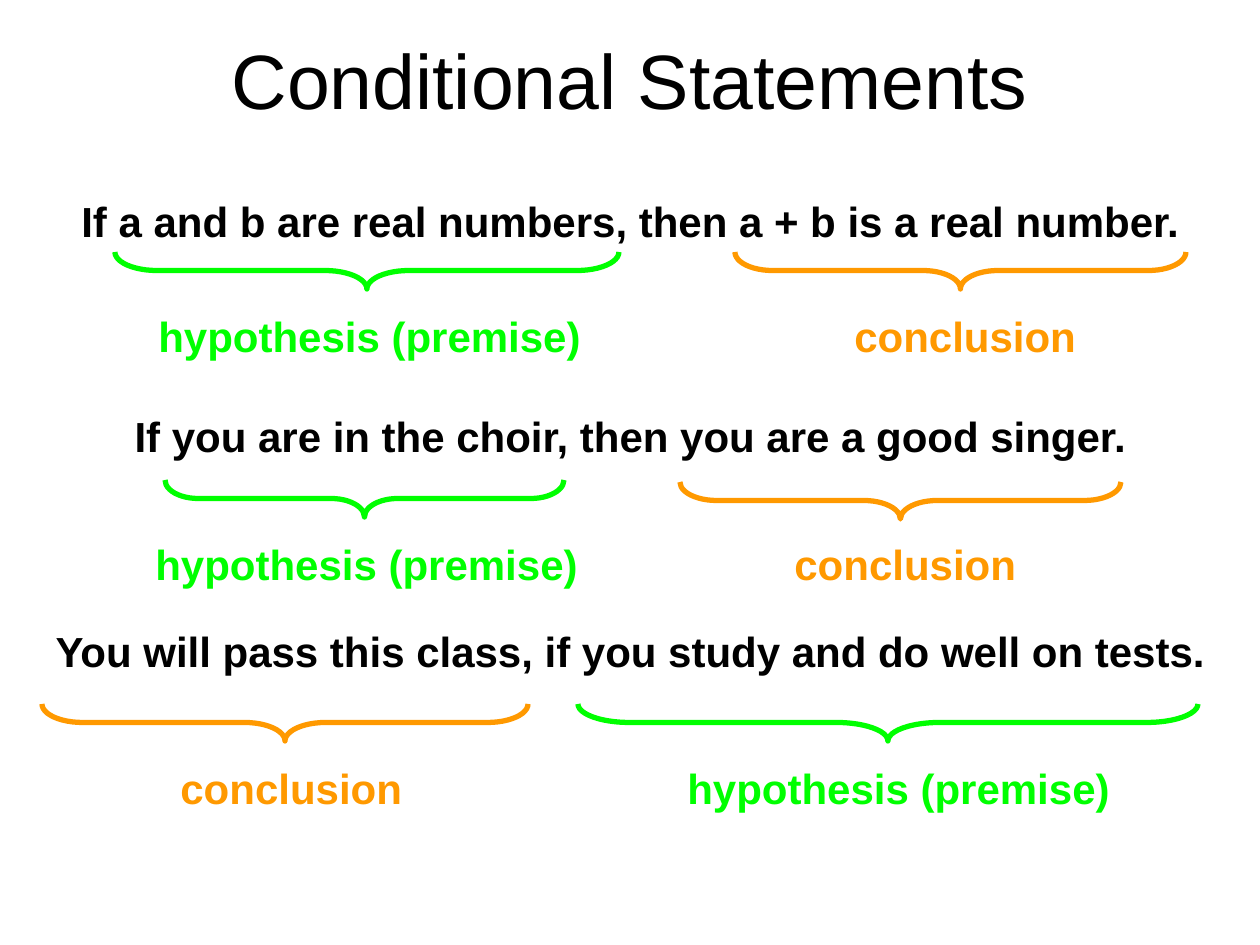
import pptx
import pptx.dml.color
import pptx.enum.shapes
import pptx.enum.text
import pptx.oxml.ns
import pptx.util
from lxml import etree

PIXEL = 914400 // 126
BLACK = pptx.dml.color.RGBColor(0x00, 0x00, 0x00)
GREEN = pptx.dml.color.RGBColor(0x00, 0xFF, 0x00)
ORANGE = pptx.dml.color.RGBColor(0xFF, 0x99, 0x00)

BRACE_DEPTH = 37
LABEL_HEIGHT = 63
HYPOTHESIS = ("hypothesis (premise)", GREEN, 452)
CONCLUSION = ("conclusion", ORANGE, 247)

STATEMENTS = [
    "If a and b are real numbers, then a + b is a real number.",
    "If you are in the choir, then you are a good singer.",
    "You will pass this class, if you study and do well on tests.",
]
# part, brace left, brace top, brace length, label left, label top
MARKS = [
    (HYPOTHESIS, 115, 252, 504, 146, 304),
    (CONCLUSION, 735, 252, 451, 842, 304),
    (HYPOTHESIS, 165, 480, 399, 143, 532),
    (CONCLUSION, 680, 482, 441, 782, 532),
    (HYPOTHESIS, 578, 704, 620, 675, 756),
    (CONCLUSION, 42, 704, 486, 168, 756),
]


def px(count):
    return pptx.util.Emu(round(count * PIXEL))


def place(shape, left, top, width, height):
    shape.left, shape.top = px(left), px(top)
    shape.width, shape.height = px(width), px(height)


def format_runs(paragraph, size, color, bold):
    for run in paragraph.runs:
        run.font.name = "Arial"
        run.font.size = pptx.util.Pt(size)
        run.font.bold = bold
        run.font.color.rgb = color


def fill_title(shape):
    place(shape, 63, 0, 1134, 158)
    frame = shape.text_frame
    frame.text = "Conditional Statements"
    frame.vertical_anchor = pptx.enum.text.MSO_ANCHOR.MIDDLE
    frame.paragraphs[0].alignment = pptx.enum.text.PP_ALIGN.CENTER
    format_runs(frame.paragraphs[0], 44, BLACK, False)


def fill_statements(shape):
    place(shape, 32, 189, 1197, 714)
    frame = shape.text_frame
    frame.text = "\n".join(STATEMENTS)
    frame.auto_size = pptx.enum.text.MSO_AUTO_SIZE.NONE
    for paragraph in frame.paragraphs:
        paragraph.alignment = pptx.enum.text.PP_ALIGN.CENTER
        paragraph.space_before = pptx.util.Pt(0)
        paragraph.space_after = pptx.util.Pt(94)
        format_runs(paragraph, 24, BLACK, True)
        properties = paragraph._p.get_or_add_pPr()
        properties.set("marL", "0")
        properties.set("indent", "0")
        etree.SubElement(properties, pptx.oxml.ns.qn("a:buNone"))


def add_brace(slide, left, top, length, color):
    """Add a brace that opens upward, given the box it covers after rotation."""
    offset = (length - BRACE_DEPTH) / 2
    shape = slide.shapes.add_shape(
        pptx.enum.shapes.MSO_SHAPE.LEFT_BRACE,
        px(left + offset), px(top - offset), px(BRACE_DEPTH), px(length),
    )
    shape.rotation = 270
    shape.adjustments[0] = length / (12 * BRACE_DEPTH)
    shape.adjustments[1] = 0.5
    shape.shadow.inherit = False
    shape.fill.background()
    shape.line.color.rgb = color
    shape.line.width = pptx.util.Pt(3)


def add_label(slide, text, left, top, width, color):
    shape = slide.shapes.add_textbox(px(left), px(top), px(width), px(LABEL_HEIGHT))
    frame = shape.text_frame
    frame.text = text
    frame.word_wrap = False
    frame.auto_size = pptx.enum.text.MSO_AUTO_SIZE.SHAPE_TO_FIT_TEXT
    format_runs(frame.paragraphs[0], 24, color, True)


def main():
    presentation = pptx.Presentation()
    presentation.slide_width = pptx.util.Inches(10)
    presentation.slide_height = pptx.util.Inches(7.5)
    slide = presentation.slides.add_slide(presentation.slide_layouts[1])
    fill_title(slide.shapes.title)
    fill_statements(slide.placeholders[1])
    for part, left, top, length, label_left, label_top in MARKS:
        text, color, label_width = part
        add_brace(slide, left, top, length, color)
        add_label(slide, text, label_left, label_top, label_width, color)
    presentation.save("out.pptx")


if __name__ == "__main__":
    main()
